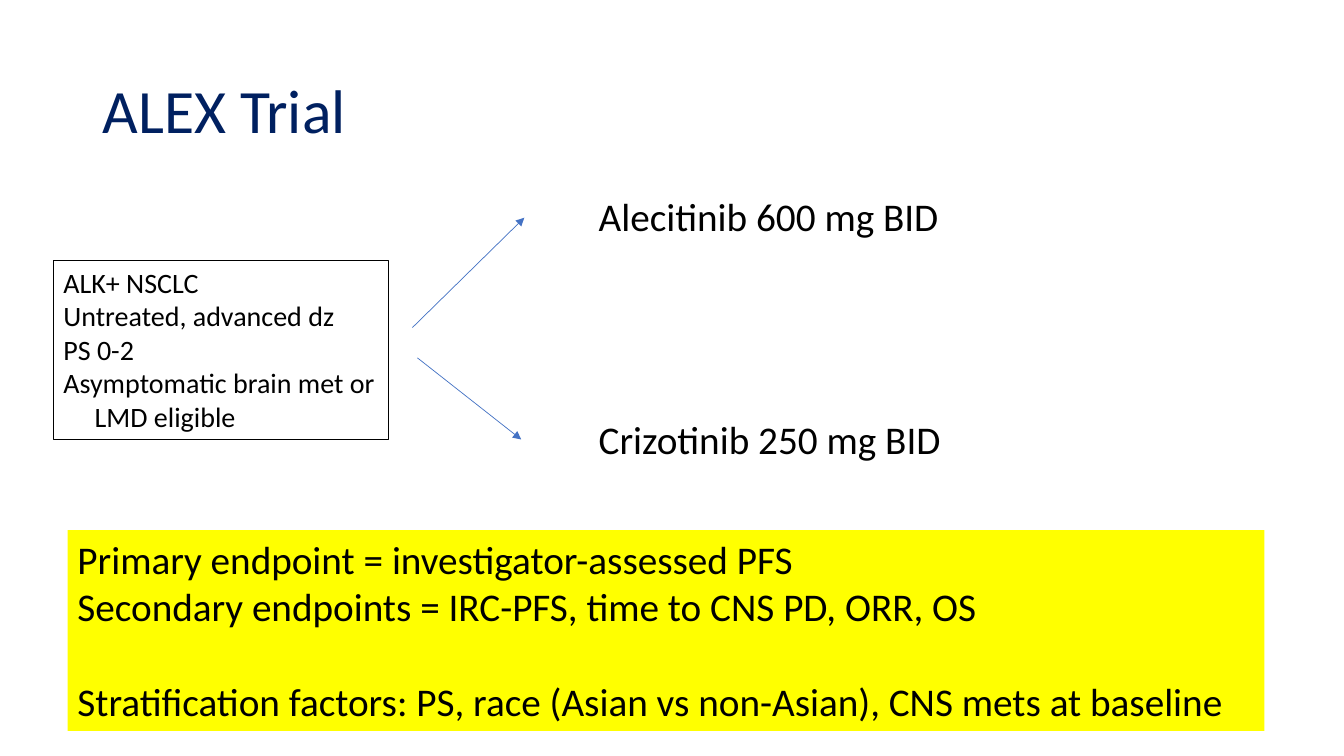
from lxml.etree import SubElement
from pptx import Presentation
from pptx.dml.color import RGBColor
from pptx.enum.shapes import MSO_CONNECTOR
from pptx.enum.text import MSO_ANCHOR, PP_ALIGN
from pptx.oxml.ns import qn
from pptx.util import Pt

PX = 9144
FONT = "Calibri"
NAVY = RGBColor(0x00, 0x20, 0x60)
BLACK = RGBColor(0x00, 0x00, 0x00)
YELLOW = RGBColor(0xFF, 0xFF, 0x00)
BLUE = RGBColor(0x44, 0x72, 0xC4)

TITLE = "ALEX Trial"
ELIGIBILITY = [
    "ALK+ NSCLC",
    "Untreated, advanced dz",
    "PS 0-2",
    "Asymptomatic brain met or",
    "LMD eligible",
]
ARMS = [
    ("Alecitinib 600 mg BID", 186, (409, 325, 520, 216)),
    ("Crizotinib 250 mg BID", 407, (414, 355, 517, 436)),
]
ENDPOINTS = [
    "Primary endpoint = investigator-assessed PFS",
    "Secondary endpoints = IRC-PFS, time to CNS PD, ORR, OS",
    "Stratification factors: PS, race (Asian vs non-Asian), CNS mets at baseline",
]


def scaled(lengths):
    """Turn px lengths into EMU."""
    return [length * PX for length in lengths]


def write_lines(frame, lines, size, color=BLACK):
    """Write one left-aligned paragraph per line and return the paragraphs."""
    frame.word_wrap = True
    for index, line in enumerate(lines):
        paragraph = frame.add_paragraph() if index else frame.paragraphs[0]
        paragraph.alignment = PP_ALIGN.LEFT
        run = paragraph.add_run()
        run.text = line
        run.font.name = FONT
        run.font.size = Pt(size)
        run.font.color.rgb = color
    return frame.paragraphs


def add_lines(slide, box, lines, size):
    """Add a text box and return it with its paragraphs."""
    panel = slide.shapes.add_textbox(*scaled(box))
    return panel, write_lines(panel.text_frame, lines, size)


def add_arrow(slide, ends):
    """Draw a thin arrow between two points."""
    arrow = slide.shapes.add_connector(MSO_CONNECTOR.STRAIGHT, *scaled(ends))
    arrow.line.color.rgb = BLUE
    arrow.line.width = Pt(0.5)
    SubElement(arrow.line._get_or_add_ln(), qn("a:tailEnd"), type="triangle")
    SubElement(arrow._element.spPr, qn("a:effectLst"))


def main():
    """Build the trial design slide."""
    deck = Presentation()
    deck.slide_width, deck.slide_height = scaled((1333, 750))
    slide = deck.slides.add_slide(deck.slide_layouts[5])

    title = slide.shapes.title
    title.left, title.top, title.width, title.height = scaled((92, 40, 1150, 145))
    title.text_frame.vertical_anchor = MSO_ANCHOR.MIDDLE
    write_lines(title.text_frame, [TITLE], 44, NAVY)[0].line_spacing = 0.9

    eligibility, criteria = add_lines(slide, (53, 258, 332, 178), ELIGIBILITY, 20)
    eligibility.line.color.rgb = BLACK
    eligibility.line.width = Pt(0.75)
    continuation = criteria[-1]._p.get_or_add_pPr()
    continuation.set("marL", str(31 * PX))
    continuation.set("indent", "0")

    for drug, top, arrow_ends in ARMS:
        add_arrow(slide, arrow_ends)
        add_lines(slide, (584, top, 363, 57), [drug], 28)

    endpoints, statements = add_lines(slide, (67, 526, 1187, 199), ENDPOINTS, 28)
    endpoints.fill.solid()
    endpoints.fill.fore_color.rgb = YELLOW
    statements[-1].space_before = Pt(34)

    deck.save("out.pptx")


if __name__ == "__main__":
    main()
